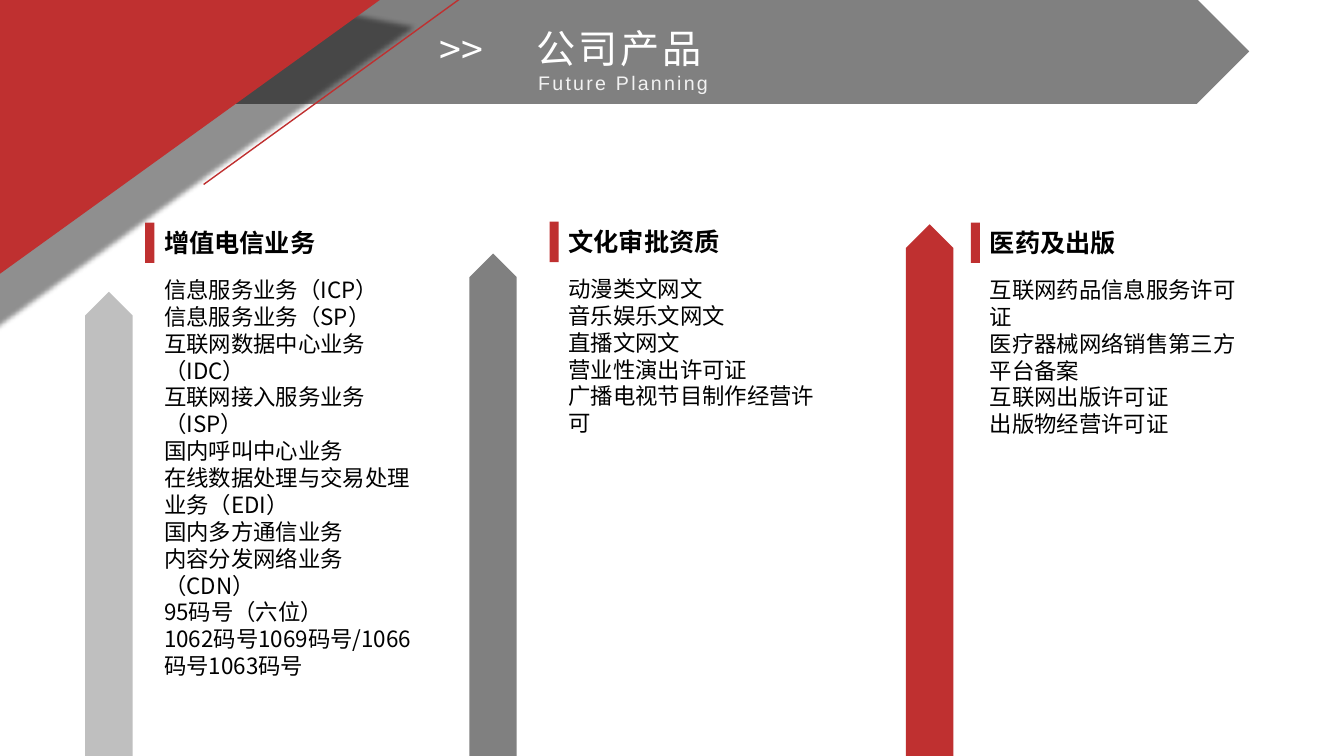
from lxml.etree import SubElement as Sub
from pptx import Presentation
from pptx.dml.color import RGBColor
from pptx.enum.shapes import MSO_CONNECTOR as Link, MSO_SHAPE as Kind
from pptx.enum.text import MSO_ANCHOR as Anchor, MSO_AUTO_SIZE as Auto, PP_ALIGN as Align
from pptx.oxml.ns import qn
from pptx.util import Emu, Pt

RED, GRAY, PALE = "BF3030", "808080", "BFBFBF"
WHITE, BLACK = "FFFFFF", "000000"
HAN = "Noto Sans CJK SC"
SCALE = 9144  # 100 px to the inch


def px(*nums):
    return [Emu(int(n * SCALE)) for n in nums]


def rgb(code):
    return RGBColor.from_string(code)


class Deck:
    def __init__(self, wide, high):
        self.prs = Presentation()
        self.prs.slide_width, self.prs.slide_height = px(wide, high)
        self.slide = self.prs.slides.add_slide(self.prs.slide_layouts[5])
        self.home = self.slide.shapes

    def shape(self, kind, box, fill, turn=0, home=None):
        item = (home or self.home).add_shape(kind, *px(*box))
        item.shadow.inherit = False
        item.fill.solid()
        item.fill.fore_color.rgb = rgb(fill)
        item.line.fill.background()
        item.rotation = turn
        return item

    def shade(self, item, blur, dist, angle, alpha):
        effects = item._element.spPr.find(qn("a:effectLst"))
        outer = Sub(effects, qn("a:outerShdw"), blurRad=str(Pt(blur)),
                    dist=str(Pt(dist)), dir=str(angle * 60000),
                    algn="tl", rotWithShape="0")
        color = Sub(outer, qn("a:srgbClr"), val=BLACK)
        Sub(color, qn("a:alpha"), val=str(alpha * 1000))

    def line(self, ends, color, width):
        item = self.home.add_connector(Link.STRAIGHT, *px(*ends))
        item.line.color.rgb = rgb(color)
        item.line.width = Pt(width)
        Sub(item._element.spPr, qn("a:effectLst"))

    def label(self, item, lines, size, color, font=HAN, bold=False,
              align=Align.LEFT, space=0):
        frame = item.text_frame
        frame.word_wrap = True
        frame.auto_size = Auto.SHAPE_TO_FIT_TEXT
        frame.vertical_anchor = Anchor.TOP
        frame.text = "\n".join(lines)
        for para in frame.paragraphs:
            para.alignment = align
            face = para.font
            face.size, face.bold, face.name = Pt(size), bold, font
            face.color.rgb = rgb(color)
            Sub(face._rPr, qn("a:ea"), typeface=font)
            if space:
                face._rPr.set("spc", str(space))

    def text(self, box, lines, size, color, home=None, **style):
        item = (home or self.home).add_textbox(*px(*box))
        self.label(item, lines, size, color, **style)

    def title(self, box, words, size, color, **style):
        item = self.home.title
        item.left, item.top, item.width, item.height = px(*box)
        self.label(item, [words], size, color, **style)
        # Bring the title in front of the banner
        self.home._spTree.append(item._element)

    def column(self, left, top, mid, tip, length, fill, head, lines, high):
        home = self.home.add_group_shape().shapes
        thick = 47
        box = (mid - length // 2, tip + (length - thick) // 2, length, thick)
        self.shape(Kind.PENTAGON, box, fill, 270, home)
        self.text((left, top, 187, 40), [head], 18, BLACK, home, bold=True)
        self.text((left, top + 48, 272, high), lines, 16, BLACK, home)
        self.shape(Kind.RECTANGLE, (left - 9, top, 9, 40), RED, home=home)


COLUMNS = [
    (153, 221, 108, 290, 554, PALE, "增值电信业务", [
        "信息服务业务（ICP）", "信息服务业务（SP）",
        "互联网数据中心业务（IDC）", "互联网接入服务业务（ISP）",
        "国内呼叫中心业务", "在线数据处理与交易处理业务（EDI）",
        "国内多方通信业务", "内容分发网络业务（CDN）",
        "95码号（六位）", "1062码号1069码号/1066码号1063码号"], 387),
    (554, 220, 489, 252, 612, GRAY, "文化审批资质", [
        "动漫类文网文", "音乐娱乐文网文", "直播文网文",
        "营业性演出许可证", "广播电视节目制作经营许可"], 172),
    (972, 221, 922, 223, 554, RED, "医药及出版", [
        "互联网药品信息服务许可证", "医疗器械网络销售第三方平台备案",
        "互联网出版许可证", "出版物经营许可证"], 198),
]


def main():
    deck = Deck(1333, 750)

    # Banner and corner
    deck.shape(Kind.PENTAGON, (61, -1, 1178, 104), GRAY)
    corner = deck.shape(Kind.ISOSCELES_TRIANGLE, (-244, -118, 587, 317), RED, 324.2)
    deck.shade(corner, blur=4, dist=30, angle=45, alpha=43)
    deck.line((202, 183, 496, -30), RED, 1)

    # Product columns
    for column in COLUMNS:
        deck.column(*column)

    # Heading
    deck.title((522, 19, 342, 57), "公司产品", 28, WHITE,
               align=Align.JUSTIFY, space=200)
    deck.text((524, 65, 340, 34), ["Future Planning"], 14, "F2F2F2",
              font="Arial", align=Align.JUSTIFY, space=160)
    deck.text((426, 20, 77, 57), [">>"], 28, WHITE)

    deck.prs.save("out.pptx")


if __name__ == "__main__":
    main()
